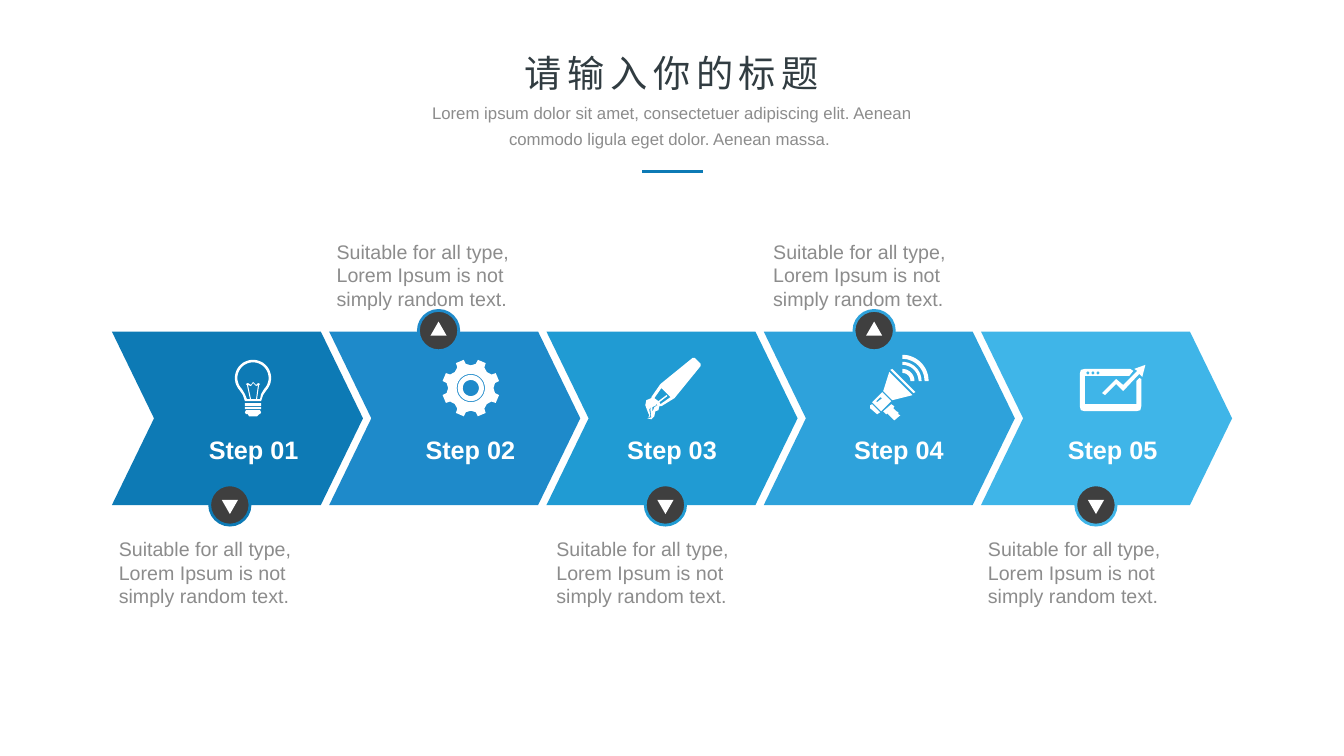
import math
import pptx
import pptx.util
import pptx.dml.color
import pptx.enum.shapes
import pptx.enum.text
import pptx.oxml
import pptx.oxml.ns

# Content
TITLE = "请输入你的标题"
INTRO = ("Lorem ipsum dolor sit amet, consectetuer adipiscing elit. "
         "Aenean commodo ligula eget dolor. Aenean massa. ")
NOTE = "Suitable for all type, Lorem Ipsum is not simply random text."
# name, colour, label left, note left, badge left, note above the band
STEPS = [
    ("Step 01", "0D7AB5", 1.69, 1.08, 2.08, False),
    ("Step 02", "1E8ACA", 3.84, 3.24, 4.15, True),
    ("Step 03", "209BD3", 5.84, 5.42, 6.4, False),
    ("Step 04", "2EA2DB", 8.09, 7.57, 8.47, True),
    ("Step 05", "3FB5E8", 10.21, 9.7, 10.67, False),
]
WHITE, GREY, DARK, INK = "FFFFFF", "8C8C8C", "3F3F3F", "313C41"
LEFT, PITCH, TOP, WIDE, HIGH = 1.11, 2.155, 3.29, 2.49, 1.72

# Text formats
HEAD = {"size": pptx.util.Pt(26.6), "name": "Arial"}
LEAD = {"size": pptx.util.Pt(12), "name": "Arial"}
BODY = {"size": pptx.util.Pt(14), "name": "Arial"}
LABEL = {"size": pptx.util.Pt(18), "name": "Arial", "bold": True}

Inches = pptx.util.Inches
KIND = pptx.enum.shapes.MSO_SHAPE
CENTER = pptx.enum.text.PP_ALIGN.CENTER

deck = pptx.Presentation()
deck.slide_width, deck.slide_height = Inches(13.33), Inches(7.5)
slide = deck.slides.add_slide(deck.slide_layouts[6])
shapes = slide.shapes


def paint(part, color):
    """Give a fill, line or font a solid hex colour."""
    if hasattr(part, "solid"):
        part.solid()
        part = part.fore_color
    else:
        part = part.color
    part.rgb = pptx.dml.color.RGBColor.from_string(color)


def plain(shape, color, edge=None):
    shape.shadow.inherit = False
    paint(shape.fill, color)
    if edge:
        paint(shape.line, edge)
        shape.line.width = pptx.util.Pt(2)
    else:
        shape.line.fill.background()
    return shape


def block(kind, x, y, w, h, color, edge=None):
    shape = shapes.add_shape(kind, Inches(x), Inches(y), Inches(w), Inches(h))
    return plain(shape, color, edge)


def write(text, x, y, w, h, form, color, align=None, space=None, wrap=True):
    box = shapes.add_textbox(Inches(x), Inches(y), Inches(w), Inches(h))
    frame = box.text_frame
    frame.word_wrap = wrap
    frame.auto_size = pptx.enum.text.MSO_AUTO_SIZE.SHAPE_TO_FIT_TEXT
    para = frame.paragraphs[0]
    para.alignment, para.line_spacing = align, space
    run = para.add_run()
    run.text = text
    for key, value in form.items():
        setattr(run.font, key, value)
    paint(run.font, color)
    return run


# Icon outlines, in inches
def arc(x, y, r, start=0, end=360, count=40):
    turns = [math.radians(start + (end - start) * i / count)
             for i in range(count + 1)]
    return [(x + r * math.cos(t), y + r * math.sin(t)) for t in turns]


def rect(x1, y1, x2, y2):
    return [(x1, y1), (x2, y1), (x2, y2), (x1, y2)]


def band(r1, r2):
    return arc(8.95, 3.78, r1, -90, 0) + arc(8.95, 3.78, r2, 0, -90)


def teeth(x, y):
    notch = [(.28, -.07), (.24, -.05), (.225, 0), (.24, .05), (.28, .07)]
    points = []
    for i in range(8):
        c, s = math.cos(i * math.pi / 4), math.sin(i * math.pi / 4)
        points += [(x + a * c - b * s, y + a * s + b * c) for a, b in notch]
    return points


BULB = [
    rect(2.43, 4, 2.59, 4.03), rect(2.43, 4.04, 2.59, 4.06),
    [(2.44, 4.07), (2.58, 4.07), (2.59, 4.09), (2.58, 4.11), (2.57, 4.11),
     (2.55, 4.13), (2.47, 4.13), (2.46, 4.11), (2.44, 4.11), (2.43, 4.09)],
    arc(2.51, 3.75, .18, 137, 403) + [(2.61, 3.92), (2.59, 3.98), (2.43, 3.98),
                                      (2.41, 3.92)],
    arc(2.51, 3.75, .155, 135, 405) + [(2.59, 3.91), (2.58, 3.96), (2.45, 3.96),
                                       (2.43, 3.91)],
    [(2.48, 3.96), (2.45, 3.82), (2.44, 3.81), (2.46, 3.8), (2.49, 3.82),
     (2.51, 3.79), (2.54, 3.82), (2.56, 3.8), (2.58, 3.81), (2.57, 3.82),
     (2.55, 3.96), (2.54, 3.96), (2.56, 3.82), (2.54, 3.83), (2.51, 3.8),
     (2.49, 3.83), (2.46, 3.82), (2.49, 3.96)],
]
GEAR = [teeth(4.67, 3.85)] + [arc(4.67, 3.85, r) for r in (.14, .13, .08)]
BRUSH = [
    [(6.95, 3.61), (6.89, 3.55), (6.87, 3.55), (6.55, 3.81), (6.46, 3.94),
     (6.46, 3.95), (6.41, 3.97), (6.4, 4.02), (6.43, 4.1), (6.44, 4.12),
     (6.43, 4.14), (6.45, 4.13), (6.44, 4.06), (6.46, 4.03), (6.45, 4.06),
     (6.46, 4.14), (6.42, 4.15), (6.46, 4.16), (6.49, 4.13), (6.5, 4.08),
     (6.53, 4.07), (6.54, 4.03), (6.56, 4.03), (6.69, 3.95), (6.95, 3.63)],
    [(6.49, 4.04), (6.47, 4.09), (6.47, 4.04), (6.51, 4.02), (6.51, 4),
     (6.52, 4.02)],
    [(6.55, 4.01), (6.54, 3.99), (6.62, 3.93), (6.61, 3.92), (6.53, 3.98),
     (6.49, 3.95), (6.56, 3.85), (6.65, 3.94)],
]
HORN = [
    band(.26, .22), band(.19, .16), band(.12, .08),
    [(8.65, 4.01), (8.73, 4.09), (8.7, 4.11), (8.63, 4.05), (8.63, 4.02)],
    [(8.84, 3.98), (8.74, 4.08), (8.65, 3.99), (8.75, 3.89)],
    [(8.75, 3.95), (8.73, 3.94), (8.69, 3.98), (8.7, 3.99)],
    [(8.83, 3.67), (9.06, 3.9), (9.08, 3.89), (8.85, 3.66)],
    [(8.76, 3.88), (8.85, 3.97), (9.05, 3.92), (8.82, 3.69)],
    [(8.91, 4.11), (8.91, 4.09), (8.89, 4.08), (8.87, 4.06), (8.86, 4.05),
     (8.87, 4.03), (8.84, 4.01), (8.76, 4.08), (8.79, 4.11), (8.8, 4.1),
     (8.87, 4.17), (8.93, 4.12)],
]
SCREEN = [
    [(11.36, 3.62), (11.33, 3.74), (11.3, 3.71), (11.14, 3.88), (11.07, 3.81),
     (10.96, 3.92), (10.93, 3.9), (11.07, 3.76), (11.14, 3.82), (11.28, 3.68),
     (11.25, 3.66)],
    [(11.3, 3.75), (11.32, 3.76), (11.32, 4.03), (11.31, 4.07), (11.27, 4.08),
     (10.76, 4.08), (10.72, 4.07), (10.71, 4.03), (10.71, 3.71), (10.72, 3.67),
     (10.76, 3.66), (11.21, 3.66), (11.24, 3.68), (11.2, 3.73), (10.76, 3.73),
     (10.76, 4.01), (11.27, 4.01), (11.27, 3.78)],
] + [arc(x, 3.7, .015, count=12) for x in (10.79, 10.84, 10.89)]


def icon(loops):
    pen = None
    for loop in loops:
        points = [(x * 1000, y * 1000) for x, y in loop]
        if pen is None:
            pen = shapes.build_freeform(*points[0], scale=914.4)
        else:
            pen.move_to(*points[0])
        pen.add_line_segments(points[1:], close=True)
    plain(pen.convert_to_shape(), WHITE)


# Arrow band
for i, step in enumerate(STEPS):
    arrow = block(KIND.CHEVRON, LEFT + i * PITCH, TOP, WIDE, HIGH, step[1])
    arrow.adjustments[0] = .243

for loops in (BULB, GEAR, BRUSH, HORN, SCREEN):
    icon(loops)

# Labels, notes and badges
for name, color, label, note, badge, above in STEPS:
    write(name, label, 4.26, 1.65, .4, LABEL, WHITE, CENTER)
    write(NOTE, note, 2.33 if above else 5.28, 2.18, .81, BODY, GREY)
    y = 3.08 if above else 4.81
    block(KIND.OVAL, badge, y, .4, .4, DARK, color)
    mark = block(KIND.ISOSCELES_TRIANGLE, badge + .12,
                 y + (.11 if above else .15), .16, .14, WHITE)
    mark.rotation = 0 if above else 180

# Heading
rule = shapes.add_connector(pptx.enum.shapes.MSO_CONNECTOR.STRAIGHT,
                            Inches(6.37), Inches(1.7), Inches(6.97), Inches(1.7))
paint(rule.line, STEPS[0][1])
rule.line.width = pptx.util.Pt(2)
rule._element.spPr.append(pptx.oxml.parse_xml(
    "<a:effectLst %s/>" % pptx.oxml.ns.nsdecls("a")))
title = write(TITLE, 5.06, .54, 3.21, .46, HEAD, INK, CENTER, .8, False)
title.font._element.set("spc", "400")
write(INTRO, 4.04, .91, 5.25, .6, LEAD, GREY, CENTER, 1.3)

deck.save("out.pptx")
